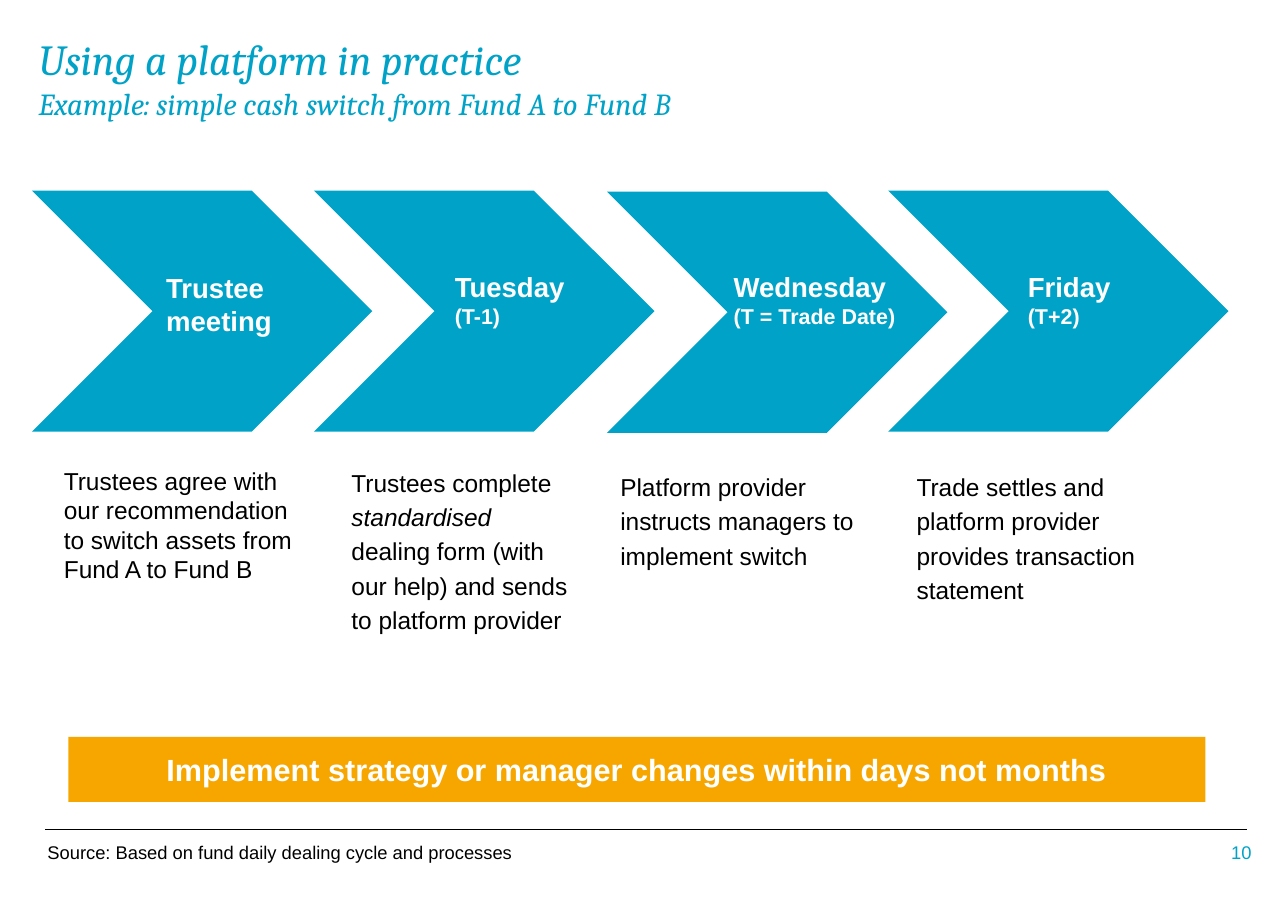
"""Builds the slide on a fund switch made through a platform."""
from dataclasses import dataclass

import pptx
import pptx.dml.color
import pptx.enum.shapes
import pptx.enum.text
import pptx.oxml
import pptx.util

STEPS = [
    {
        "day": [("Trustee meeting", "label")],
        "note": [("Trustees agree with our recommendation to switch assets from", "note"),
                 "break", ("Fund A to Fund B", "note")],
        "chevron": (2.48, 20.92), "day_box": (12.06, 29.14, 10.78, 11.37),
        "note_box": (3.85, 50.42, 20.62, 38.81),
        "inset": (0.13, 0.06), "leading": 1, "after": 6,
    },
    {
        "day": [("Tuesday", "label"), "break", ("(T-1)", "sublabel")],
        "note": [("Trustees complete ", "note"), ("standardised ", "stress"),
                 ("dealing form (with our help) and sends to platform provider", "note")],
        "chevron": (24.38, 20.92), "day_box": (34.47, 29.02, 10.78, 10.28),
        "note_box": (26.35, 50.18, 18.91, 39.06),
        "inset": (0.11, 0.05), "leading": 1.17, "after": 6,
    },
    {
        "day": [("Wednesday", "label"), "break", ("(T = Trade Date)", "sublabel")],
        "note": [("Platform provider instructs managers to implement switch", "note")],
        "chevron": (47.13, 21.04), "day_box": (56.12, 29.02, 14.8, 10.28),
        "note_box": (47.22, 50.67, 20.27, 38.81),
        "inset": (0.11, 0.05), "leading": 1.17, "after": 6,
    },
    {
        "day": [("Friday", "label"), "break", ("(T+2)", "sublabel")],
        "note": [("Trade settles and platform provider provides transaction statement", "note")],
        "chevron": (68.95, 20.92), "day_box": (78.96, 29.02, 10.78, 10.28),
        "note_box": (70.23, 50.67, 19.85, 39.3),
        "inset": (0.11, 0.05), "leading": 1.17, "after": 12,
    },
]
HEADING = [("Using a platform in practice", "title"), "break",
           ("Example: simple cash switch from Fund A to Fund B", "subtitle")]
BANNER = [("Implement strategy or manager changes within days not months", "banner")]
SOURCE = [("Source: Based on fund daily dealing cycle and processes", "source")]
PAGE = [("10", "page")]

CHEVRON_SIZE = (26.43, 26.48)
HEADING_BOX = (2.05, 2.9, 78.96, 16.69)
BANNER_BOX = (5.3, 80.89, 88.28, 7.13)
SOURCE_BOX = (2.57, 92.14, 54.75, 2.9)
PAGE_BOX = (91.36, 92.14, 6.93, 2.9)
RULE = (3.51, 91.05, 96.83, 91.05)


@dataclass(frozen=True)
class Style:
    size: int
    colour: str
    font: str = "Arial"
    bold: bool = False
    italic: bool = False


class Theme:
    blue, orange, black, white = "00A3C7", "F7A600", "000000", "FFFFFF"
    text = {
        "title": Style(28, blue, "Cambria", italic=True),
        "subtitle": Style(20, blue, "Cambria", italic=True),
        "label": Style(18, white, bold=True),
        "sublabel": Style(14, white, bold=True),
        "note": Style(16, black),
        "stress": Style(16, black, italic=True),
        "banner": Style(20, white, bold=True),
        "source": Style(12, black),
        "page": Style(12, blue),
    }


ALIGN = pptx.enum.text.PP_ALIGN
ANCHOR = pptx.enum.text.MSO_ANCHOR
PRESET = pptx.enum.shapes.MSO_SHAPE
rgb = pptx.dml.color.RGBColor.from_string

deck = pptx.Presentation()
deck.slide_width = pptx.util.Inches(11.69)
deck.slide_height = pptx.util.Inches(8.27)
slide = deck.slides.add_slide(deck.slide_layouts[6])


def place(shares):
    """Turns percentages of the slide's width and height into lengths."""
    sides = (deck.slide_width, deck.slide_height)
    return [round(share * sides[i % 2] / 100) for i, share in enumerate(shares)]


def write(holder, runs, inset=(0.1, 0.05), align=ALIGN.LEFT, anchor=ANCHOR.TOP,
          leading=1, after=0):
    """Fills a shape with one paragraph of styled runs."""
    frame = holder.text_frame
    frame.word_wrap = True
    frame.vertical_anchor = anchor
    frame.margin_left = frame.margin_right = pptx.util.Inches(inset[0])
    frame.margin_top = frame.margin_bottom = pptx.util.Inches(inset[1])
    paragraph = frame.paragraphs[0]
    paragraph.alignment = align
    paragraph.line_spacing = leading
    paragraph.space_after = pptx.util.Pt(after)
    for part in runs:
        if part == "break":
            paragraph.add_line_break()
            continue
        words, role = part
        style = Theme.text[role]
        run = paragraph.add_run()
        run.text = words
        run.font.name = style.font
        run.font.size = pptx.util.Pt(style.size)
        run.font.bold = style.bold
        run.font.italic = style.italic
        run.font.color.rgb = rgb(style.colour)


def text(box, runs, **layout):
    """Adds a text box."""
    write(slide.shapes.add_textbox(*place(box)), runs, **layout)


def block(preset, box, colour):
    """Adds a flat filled shape without outline."""
    shape = slide.shapes.add_shape(preset, *place(box))
    shape.shadow.inherit = False
    shape.fill.solid()
    shape.fill.fore_color.rgb = rgb(colour)
    shape.line.fill.background()
    return shape


rule = slide.shapes.add_connector(pptx.enum.shapes.MSO_CONNECTOR.STRAIGHT, *place(RULE))
rule.line.color.rgb = rgb(Theme.black)
rule.line.width = pptx.util.Pt(0.75)
rule._element.spPr.append(pptx.oxml.parse_xml(
    '<a:effectLst xmlns:a="http://schemas.openxmlformats.org/drawingml/2006/main"/>'))

text(HEADING_BOX, HEADING, inset=(0.11, 0.06))
text(PAGE_BOX, PAGE, inset=(0.13, 0.06), align=ALIGN.RIGHT, anchor=ANCHOR.MIDDLE)
text(SOURCE_BOX, SOURCE, inset=(0.13, 0.06), anchor=ANCHOR.MIDDLE, after=4.8)

for step in STEPS:
    block(PRESET.CHEVRON, step["chevron"] + CHEVRON_SIZE, Theme.blue)
for step in STEPS:
    text(step["day_box"], step["day"])
    text(step["note_box"], step["note"], inset=step["inset"],
         leading=step["leading"], after=step["after"])

banner = block(PRESET.RECTANGLE, BANNER_BOX, Theme.orange)
write(banner, BANNER, inset=(0.11, 0.05), align=ALIGN.CENTER, anchor=ANCHOR.MIDDLE)

deck.save("out.pptx")
